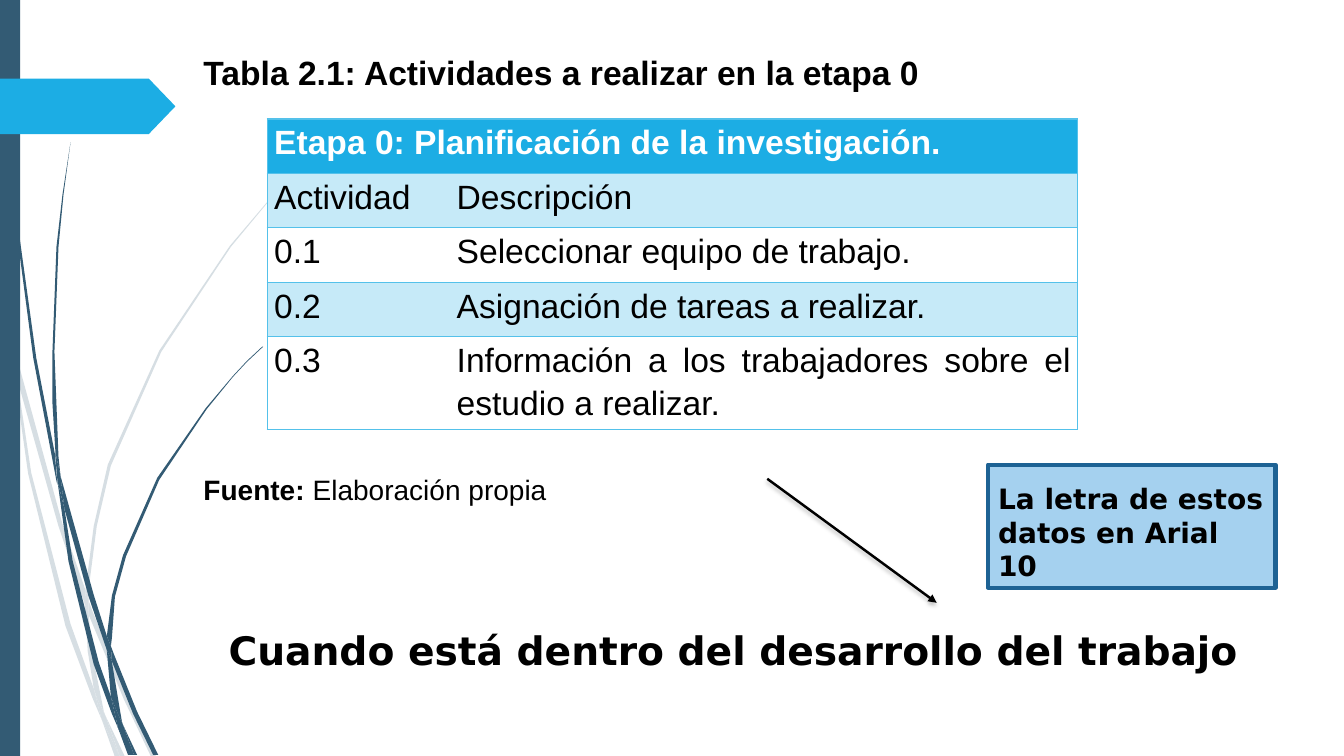
from pptx import Presentation
from pptx.dml.color import RGBColor
from pptx.enum.shapes import MSO_CONNECTOR as Connector, MSO_SHAPE as Shape
from pptx.enum.text import MSO_AUTO_SIZE as AutoSize, PP_ALIGN as Align
from pptx.oxml import parse_xml
from pptx.oxml.ns import nsdecls
from pptx.util import Inches, Pt

COLUMNS, ROWS = 13.33, 7.5
BLACK = RGBColor(0x00, 0x00, 0x00)
WHITE = RGBColor(0xFF, 0xFF, 0xFF)
SLATE = RGBColor(0x33, 0x5B, 0x74)
MIST = RGBColor(0xD6, 0xDE, 0xE3)
CYAN = RGBColor(0x1C, 0xAD, 0xE4)
PALE_CYAN = RGBColor(0xC6, 0xEA, 0xF8)
RULE_CYAN = RGBColor(0x54, 0xC1, 0xEA)
NOTE_BLUE = RGBColor(0xA5, 0xD1, 0xEF)
NOTE_EDGE = RGBColor(0x1D, 0x62, 0x94)
BODY_FONT, NOTE_FONT = "Arial", "DejaVu Sans"

# Outlines of the grass blades, in columns and rows.
PALE_BLADES = [
    [(0.11, 3.5), (0.09, 3.22), (0, 2.82), (0, 2.99), (0.1, 3.44)],
    [(0.58, 5.22), (0.84, 5.99), (0.85, 5.86), (0.62, 5.2), (0.14, 3.45), (0.17, 3.76)],
    [(0.92, 6.07), (0.88, 5.96), (0.88, 6.1), (1.23, 6.94), (1.5, 7.51), (1.55, 7.51), (1.27, 6.92)],
    [(1.19, 7.51), (1.24, 7.51), (1.05, 7.11)],
    [(0.93, 6.83), (0.7, 6.19), (0.31, 4.69), (0.17, 3.76), (0.11, 3.5), (0.28, 4.7), (0.65, 6.21),
     (0.92, 6.93), (1.01, 7.14), (0.99, 7.07)],
    [(0.84, 5.99), (0.87, 6.46), (0.93, 6.83), (0.96, 6.92), (1.05, 7.11), (1.03, 7.06), (0.91, 6.46),
     (0.88, 6.1), (0.88, 6.08)],
    [(0.88, 5.84), (0.96, 5.22), (1.1, 4.62), (1.6, 3.49), (2.29, 2.45), (2.68, 1.98), (2.9, 1.75),
     (3.12, 1.54), (3.12, 1.53), (2.89, 1.75), (2.68, 1.97), (2.28, 2.44), (1.58, 3.48), (1.07, 4.61),
     (0.93, 5.22), (0.85, 5.84), (0.85, 5.86), (0.88, 5.96)],
    [(1.01, 7.14), (1.14, 7.51), (1.19, 7.51)],
    [(0.88, 6.08), (0.88, 6.1), (0.88, 5.96), (0.85, 5.86), (0.84, 5.99)],
    [(0.96, 6.92), (0.93, 6.83), (0.99, 7.07), (1.01, 7.14), (1.19, 7.51), (1.05, 7.11)],
]
DARK_BLADES = [
    [(0.07, 1.1), (0.17, 2.33), (0.33, 3.55), (0.56, 4.77), (0.57, 4.81), (0.55, 4.57), (0.55, 4.53),
     (0.36, 3.55), (0.19, 2.32), (0.08, 1.09), (0.05, 0.48), (0.04, 0), (0.03, 0), (0.04, 0.48)],
    [(0.88, 5.92), (1.06, 6.45), (1.06, 6.31), (0.93, 5.9), (0.6, 4.72), (0.64, 5.05)],
    [(1.13, 6.49), (1.1, 6.41), (1.11, 6.56), (1.32, 7.08), (1.52, 7.49), (1.57, 7.49), (1.36, 7.06)],
    [(1.1, 6.91), (0.98, 6.57), (0.72, 5.56), (0.64, 5.05), (0.57, 4.77), (0.68, 5.57), (0.93, 6.59),
     (1.11, 7.08), (1.17, 7.22), (1.16, 7.17)],
    [(0.6, 4.72), (0.58, 4.53), (0.54, 3.49), (0.58, 2.45), (0.63, 1.93), (0.7, 1.41), (0.62, 1.93),
     (0.56, 2.45), (0.52, 3.49), (0.52, 4), (0.55, 4.49)],
    [(1.33, 7.49), (1.36, 7.49), (1.22, 7.19)],
    [(0.57, 4.77), (0.64, 5.05), (0.6, 4.72), (0.55, 4.49), (0.55, 4.53)],
    [(1.11, 6.33), (1.14, 5.92), (1.25, 5.52), (1.58, 4.76), (2.05, 4.06), (2.31, 3.74), (2.45, 3.59),
     (2.61, 3.44), (2.6, 3.44), (2.45, 3.58), (2.31, 3.73), (2.04, 4.05), (1.56, 4.74), (1.22, 5.51),
     (1.11, 5.91), (1.06, 6.31), (1.1, 6.41)],
    [(1.17, 7.22), (1.27, 7.49), (1.31, 7.49)],
    [(1.06, 6.45), (1.1, 6.91), (1.16, 7.06), (1.22, 7.19), (1.21, 7.16), (1.11, 6.56), (1.09, 6.51)],
    [(1.06, 6.45), (1.09, 6.51), (1.11, 6.56), (1.1, 6.41), (1.06, 6.31)],
    [(1.16, 7.06), (1.1, 6.91), (1.16, 7.17), (1.17, 7.22), (1.3, 7.49), (1.33, 7.49), (1.22, 7.19)],
]

STAGE_TITLE = "Etapa 0: Planificación de la investigación."
ACTIVITIES = [
    ("Actividad", "Descripción"),
    ("0.1", "Seleccionar equipo de trabajo."),
    ("0.2", "Asignación de tareas a realizar."),
    ("0.3", "Información a los trabajadores sobre el estudio a realizar."),
]


class GridSlide:
    """A blank slide measured in grid columns and rows."""

    def __init__(self, deck):
        self.shapes = deck.slides.add_slide(deck.slide_layouts[6]).shapes
        self.column = deck.slide_width / COLUMNS
        self.row = deck.slide_height / ROWS

    def place(self, x, y):
        return round(x * self.column), round(y * self.row)

    def paint(self, shape, fill, edge=None, edge_width=0):
        shape.shadow.inherit = False
        shape.fill.solid()
        shape.fill.fore_color.rgb = fill
        if edge is None:
            shape.line.fill.background()
        else:
            shape.line.color.rgb = edge
            shape.line.width = Pt(edge_width)
        return shape

    def block(self, x, y, width, height, fill, kind=Shape.RECTANGLE, **edge):
        shape = self.shapes.add_shape(kind, *self.place(x, y), *self.place(width, height))
        return self.paint(shape, fill, **edge)

    def blade(self, fill, points):
        outline = [self.place(*point) for point in points]
        builder = self.shapes.build_freeform(*outline[0])
        builder.add_line_segments(outline[1:], close=True)
        self.paint(builder.convert_to_shape(), fill)

    def style_run(self, run, size, font=BODY_FONT, color=BLACK, bold=True):
        run.font.size, run.font.name, run.font.bold = Pt(size), font, bold
        run.font.color.rgb = color

    def text(self, x, y, width, height, pieces, size, font=BODY_FONT,
             align=Align.LEFT, wrap=False, spacing=1.0, gap=0):
        """Add one paragraph made of (wording, bold) pieces."""
        box = self.shapes.add_textbox(*self.place(x, y), *self.place(width, height))
        box.text_frame.word_wrap = wrap
        box.text_frame.auto_size = AutoSize.SHAPE_TO_FIT_TEXT
        paragraph = box.text_frame.paragraphs[0]
        paragraph.alignment, paragraph.line_spacing = align, spacing
        paragraph.space_before = paragraph.space_after = Pt(gap)
        for wording, bold in pieces:
            run = paragraph.add_run()
            run.text = wording
            self.style_run(run, size, font, bold=bold)

    def cell_rules(self, cell, visible):
        """Rule the named sides (L, R, T, B) and clear the others."""
        properties = cell._tc.get_or_add_tcPr()
        for side in "LRTB":
            paint = (f'<a:solidFill><a:srgbClr val="{RULE_CYAN}"/></a:solidFill>'
                     if side in visible else "<a:noFill/>")
            properties.append(parse_xml(
                f'<a:ln{side} {nsdecls("a")} w="{Pt(1)}">{paint}</a:ln{side}>'))

    def cell(self, cell, wording, rules, fill=None, color=BLACK, bold=False):
        cell.margin_left = cell.margin_right = Inches(0.07)
        cell.margin_top = cell.margin_bottom = 0
        self.cell_rules(cell, rules)
        if fill is None:
            cell.fill.background()
        else:
            cell.fill.solid()
            cell.fill.fore_color.rgb = fill
        cell.text_frame.text = wording
        paragraph = cell.text_frame.paragraphs[0]
        paragraph.alignment, paragraph.line_spacing = Align.JUSTIFY, 1.15
        self.style_run(paragraph.runs[0], 24, color=color, bold=bold)

    def activity_table(self, x, y, widths, heights):
        table = self.shapes.add_table(
            len(heights), len(widths), *self.place(x, y),
            *self.place(sum(widths), sum(heights))).table
        table.first_row = table.horz_banding = False
        for column, width in zip(table.columns, widths):
            column.width = round(width * self.column)
        for row, height in zip(table.rows, heights):
            row.height = round(height * self.row)
        table.cell(0, 0).merge(table.cell(0, 1))
        self.cell(table.cell(0, 0), STAGE_TITLE, "LRTB", CYAN, WHITE, bold=True)
        for index, (number, task) in enumerate(ACTIVITIES, start=1):
            band = PALE_CYAN if index % 2 else None
            self.cell(table.cell(index, 0), number, "LTB", band)
            self.cell(table.cell(index, 1), task, "RTB", band)

    def arrow(self, start, end, width):
        line = self.shapes.add_connector(Connector.STRAIGHT, *self.place(*start), *self.place(*end))
        line.line.color.rgb, line.line.width = BLACK, Pt(width)
        line.line._get_or_add_ln().append(parse_xml(f'<a:tailEnd {nsdecls("a")} type="triangle"/>'))
        line._element.spPr.append(parse_xml(
            f'<a:effectLst {nsdecls("a")}><a:outerShdw blurRad="{Pt(3)}" dist="{Pt(2)}" '
            f'dir="5400000"><a:srgbClr val="{BLACK}"><a:alpha val="25000"/></a:srgbClr>'
            '</a:outerShdw></a:effectLst>'))


def main():
    deck = Presentation()
    deck.slide_width, deck.slide_height = Inches(COLUMNS), Inches(ROWS)
    page = GridSlide(deck)
    for fill, blades in ((MIST, PALE_BLADES), (SLATE, DARK_BLADES)):
        for points in blades:
            page.blade(fill, points)
    page.block(0, 0, 0.2, ROWS, SLATE)
    page_tag = page.block(0, 0.78, 1.74, 0.55, CYAN, Shape.PENTAGON)
    page_tag.adjustments[0] = 0.48

    caption = {"align": Align.JUSTIFY, "spacing": 1.5, "gap": 6}
    page.text(1.92, 0.27, 7.36, 0.64,
              [("Tabla 2.1: Actividades a realizar en la etapa 0", True)], 24, **caption)
    page.activity_table(2.65, 1.18, [1.81, 6.23], [0.54] * 4 + [0.92])
    page.text(1.92, 4.47, 3.63, 0.55,
              [("Fuente: ", True), ("Elaboración propia", False)], 20, **caption)
    page.text(2.15, 6.16, 10.24, 0.57,
              [("Cuando está dentro del desarrollo del trabajo", True)], 28, NOTE_FONT, Align.CENTER)
    page.arrow((7.61, 4.75), (9.29, 5.98), 1.75)
    page.block(9.8, 4.61, 2.85, 1.22, NOTE_BLUE, edge=NOTE_EDGE, edge_width=3)
    page.text(9.8, 4.73, 2.85, 1.11,
              [("La letra de estos datos en Arial 10", True)], 20, NOTE_FONT, wrap=True)
    deck.save("out.pptx")


if __name__ == "__main__":
    main()
